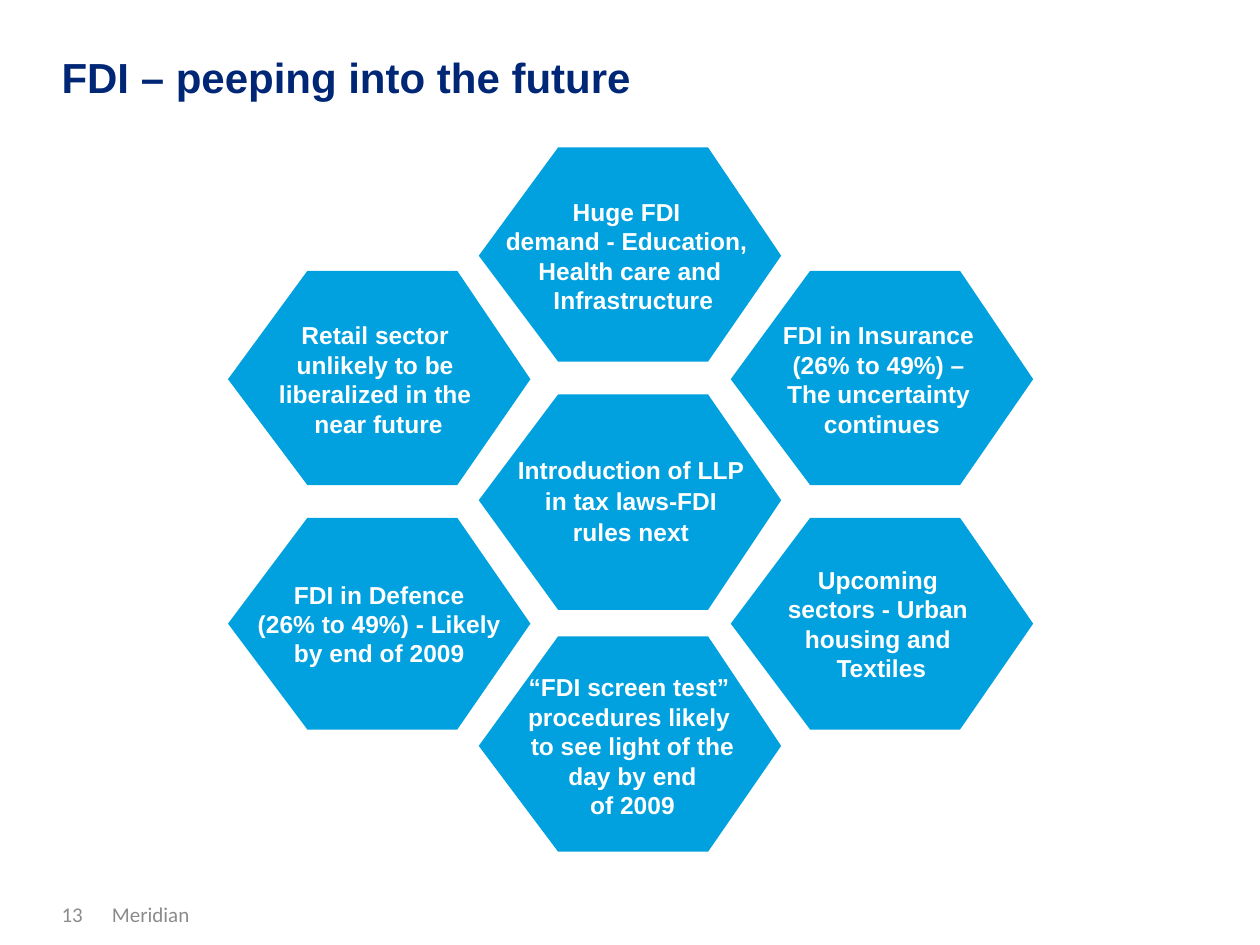
"""Build the slide on the future of FDI as a honeycomb of seven hexagons."""
from dataclasses import dataclass

from pptx import Presentation
from pptx.dml.color import RGBColor
from pptx.enum.text import MSO_ANCHOR, MSO_AUTO_SIZE, PP_ALIGN
from pptx.util import Inches, Pt


@dataclass(frozen=True)
class Theme:
    sky: RGBColor = RGBColor(0x00, 0xA1, 0xDE)
    navy: RGBColor = RGBColor(0x00, 0x27, 0x76)
    white: RGBColor = RGBColor(0xFF, 0xFF, 0xFF)
    grey: RGBColor = RGBColor(0x8C, 0x8C, 0x8C)
    heading_font: str = "Arial"
    footer_font: str = "Calibri"
    title_size: int = 24
    cell_size: int = 14
    footer_size: int = 12


HEX_WIDTH = 2.4
LINE_HEIGHT = 0.235
LEFT, MIDDLE, RIGHT = 1.81, 3.8, 5.8

CELLS = [
    (LEFT, (2.15, 3.01, 3.85), (2.21, 1.59), 1,
     ["Retail sector ", "unlikely to be ", "liberalized in the ", "near future"]),
    (MIDDLE, (1.17, 2.03, 2.87), (4.01, 1.98), 1,
     ["Huge FDI ", "demand - Education, ", "Health care and", " Infrastructure"]),
    (RIGHT, (2.15, 3.01, 3.85), (6.21, 1.58), 1,
     ["FDI in Insurance ", "(26% to 49%) – ", "The uncertainty ", "continues"]),
    (LEFT, (4.11, 4.95, 5.79), (1.99, 2.04), 1,
     ["FDI in Defence", " (26% to 49%) - Likely ", "by end of 2009"]),
    (MIDDLE, (3.13, 3.97, 4.84), (4.11, 1.85), 1.06,
     ["Introduction of LLP ", "in tax laws-FDI ", "rules next "]),
    (RIGHT, (4.11, 4.95, 5.79), (6.25, 1.49), 1,
     ["Upcoming ", "sectors - Urban ", "housing and ", "Textiles"]),
    (MIDDLE, (5.05, 5.92, 6.76), (4.19, 1.66), 1,
     ["“FDI screen test” ", "procedures likely ", "to see light of the",
      " day by end ", "of 2009"]),
]


def write(frame, lines, *, font, size, color, bold=False,
          align=PP_ALIGN.LEFT, spacing=1):
    for index, line in enumerate(lines):
        paragraph = frame.add_paragraph() if index else frame.paragraphs[0]
        paragraph.alignment = align
        paragraph.line_spacing = float(spacing)
        run = paragraph.add_run()
        run.text = line
        run.font.name = font
        run.font.size = Pt(size)
        run.font.bold = bold
        run.font.color.rgb = color


class SlideBuilder:
    def __init__(self, slide, theme):
        self.slide = slide
        self.theme = theme

    def hexagon(self, left, top, waist, bottom):
        near, far, right = left + 0.63, left + 1.82, left + HEX_WIDTH
        corners = [(near, top), (far, top), (right, waist),
                   (far, bottom), (near, bottom), (left, waist)]
        start, *others = [(Inches(x), Inches(y)) for x, y in corners]
        outline = self.slide.shapes.build_freeform(*start)
        outline.add_line_segments(others, close=True)
        cell = outline.convert_to_shape()
        cell.shadow.inherit = False
        cell.fill.solid()
        cell.fill.fore_color.rgb = self.theme.sky
        cell.line.fill.background()

    def text(self, left, top, width, height, lines, **style):
        box = self.slide.shapes.add_textbox(
            Inches(left), Inches(top), Inches(width), Inches(height))
        frame = box.text_frame
        frame.word_wrap = True
        frame.vertical_anchor = MSO_ANCHOR.MIDDLE
        write(frame, lines, **style)
        return frame

    def caption(self, left, width, center, spacing, lines):
        height = len(lines) * LINE_HEIGHT * spacing
        frame = self.text(
            left, center - height / 2, width, height, lines,
            font=self.theme.heading_font, size=self.theme.cell_size,
            color=self.theme.white, bold=True, align=PP_ALIGN.CENTER,
            spacing=spacing)
        frame.word_wrap = False
        frame.auto_size = MSO_AUTO_SIZE.SHAPE_TO_FIT_TEXT
        frame.margin_left = frame.margin_right = 0
        frame.margin_top = frame.margin_bottom = 0

    def title(self, wording):
        self.text(0.39, 0.26, 6.3, 0.69, [wording],
                  font=self.theme.heading_font, size=self.theme.title_size,
                  color=self.theme.navy, bold=True)

    def footer(self, left, width, wording):
        self.text(left, 7.19, width, 0.13, [wording],
                  font=self.theme.footer_font, size=self.theme.footer_size,
                  color=self.theme.grey)


def main():
    deck = Presentation()
    deck.slide_width, deck.slide_height = Inches(10), Inches(7.5)
    builder = SlideBuilder(deck.slides.add_slide(deck.slide_layouts[6]), Theme())

    for left, levels, _, _, _ in CELLS:
        builder.hexagon(left, *levels)
    for _, (_, waist, _), (left, width), spacing, lines in CELLS:
        builder.caption(left, width, waist, spacing, lines)

    builder.footer(0.39, 0.39, "13")
    builder.footer(0.79, 5.91, "Meridian")
    builder.title("FDI – peeping into the future")
    deck.save("out.pptx")


if __name__ == "__main__":
    main()
